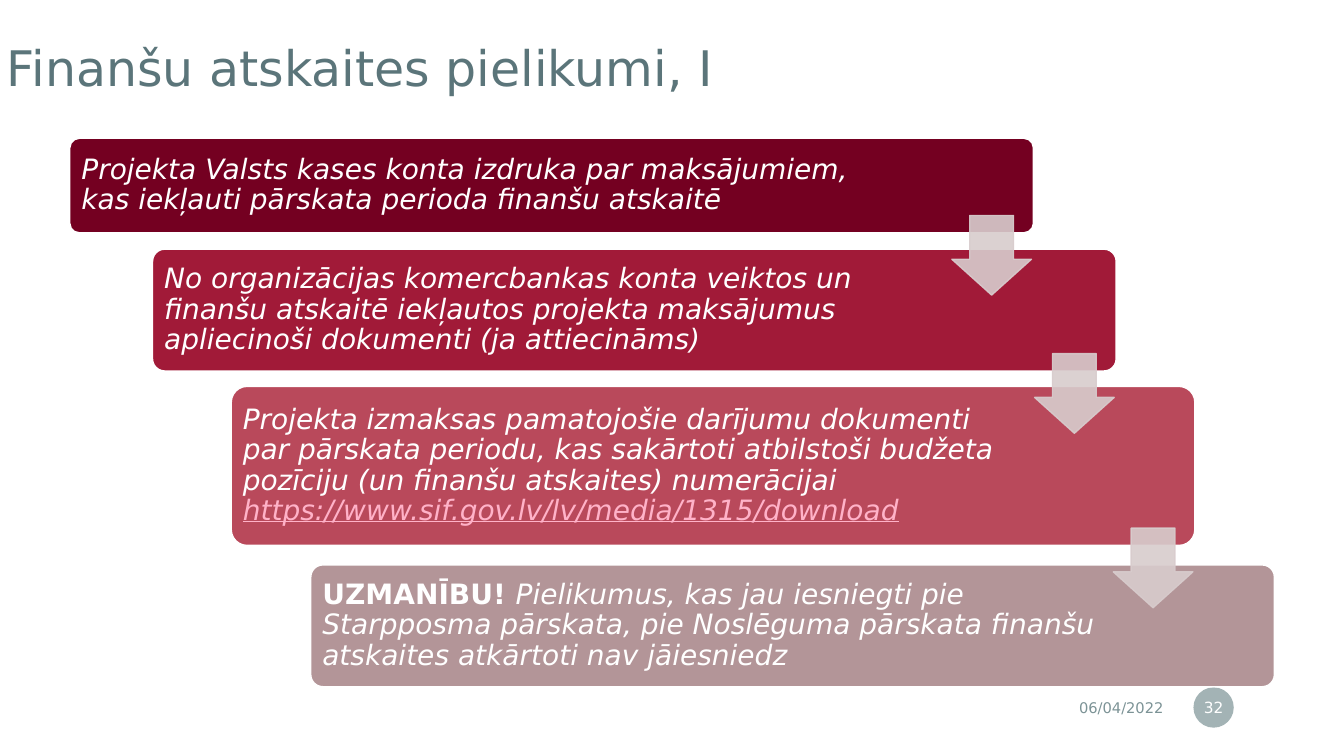
from pptx import Presentation
from pptx.dml.color import RGBColor
from pptx.enum.shapes import MSO_SHAPE
from pptx.enum.text import MSO_ANCHOR, MSO_AUTO_SIZE, PP_ALIGN
from pptx.oxml.ns import qn
from pptx.util import Pt
from lxml import etree

ROUNDED, ARROW, OVAL = MSO_SHAPE.ROUNDED_RECTANGLE, MSO_SHAPE.DOWN_ARROW, MSO_SHAPE.OVAL
TOP, MIDDLE = MSO_ANCHOR.TOP, MSO_ANCHOR.MIDDLE
LEFT, CENTER, RIGHT = PP_ALIGN.LEFT, PP_ALIGN.CENTER, PP_ALIGN.RIGHT
NO_FIT = MSO_AUTO_SIZE.NONE

FONT = "DejaVu Sans"
WHITE = RGBColor(0xFF, 0xFF, 0xFF)
SLATE = RGBColor(0x5B, 0x75, 0x7A)
GREY = RGBColor(0x7C, 0x93, 0x96)
WINE = RGBColor(0x74, 0x00, 0x21)
CRIMSON = RGBColor(0xA1, 0x1A, 0x38)
ROSE = RGBColor(0xB9, 0x49, 0x5B)
MAUVE = RGBColor(0xB3, 0x95, 0x98)
PINK = RGBColor(0xFF, 0xB2, 0xC8)
PALE = RGBColor(0xD8, 0xCC, 0xCD)


def write(sp, text, size=20, color=WHITE, bold=False, italic=False, underline=False,
          align=LEFT, anchor=MIDDLE, spacing=0.9, insets=(5.76, 5.76, 5.76, 5.76)):
    tf = sp.text_frame
    tf.word_wrap = True
    tf.auto_size = NO_FIT
    tf.vertical_anchor = anchor
    tf.margin_left, tf.margin_top, tf.margin_right, tf.margin_bottom = map(Pt, insets)
    p = tf.paragraphs[0]
    p.alignment = align
    p.line_spacing = spacing
    p.space_before = Pt(0)
    r = p.add_run()
    r.text = text
    font = r.font
    font.name, font.size, font.color.rgb = FONT, Pt(size), color
    font.bold, font.italic, font.underline = bold, italic, underline


def add_shape(kind, left, top, width, height, fill, line=None, opacity=100):
    sp = s.shapes.add_shape(kind, Pt(left), Pt(top), Pt(width), Pt(height))
    sp.shadow.inherit = False
    sp.fill.solid()
    sp.fill.fore_color.rgb = fill
    if line is None:
        sp.line.fill.background()
    else:
        sp.line.color.rgb = line
        sp.line.width = Pt(1)
    if opacity < 100:
        for solid in sp._element.spPr.iter(qn("a:solidFill")):
            etree.SubElement(solid[0], qn("a:alpha"), val=str(opacity * 1000))
    return sp


prs = Presentation()
prs.slide_width, prs.slide_height = Pt(960), Pt(540)
s = prs.slides.add_slide(prs.slide_layouts[5])

title = s.shapes.title
title.left, title.top, title.width, title.height = Pt(-9.4), Pt(25.2), Pt(821.5), Pt(85.7)
write(title, "Finanšu atskaites pielikumi, I", size=35, color=SLATE, anchor=TOP,
      insets=(14.4, 6, 14.4, 14.4))

date = s.shapes.add_textbox(Pt(621.4), Pt(492.5), Pt(216.7), Pt(25.2))
write(date, "06/04/2022", size=10.5, color=GREY, align=RIGHT, spacing=1,
      insets=(7.2, 3.6, 7.2, 3.6))

badge = add_shape(OVAL, 852.5, 491, 28.8, 28.8, GREY, opacity=70)
write(badge, "32", size=11, align=CENTER, spacing=1, insets=(1.44, 3.6, 1.44, 3.6))

CARD_WIDTH = 688.3
ARROW_SIZE = 56.9
cards = [
    (49.9, 98.8, 67.5, 587.5, WINE, [
        ("Projekta Valsts kases konta izdruka par maksājumiem, "
         "kas iekļauti pārskata perioda finanšu atskaitē", {"italic": True})]),
    (109, 178, 87, 568.8, CRIMSON, [
        ("No organizācijas komercbankas konta veiktos un finanšu atskaitē iekļautos "
         "projekta maksājumus apliecinoši dokumenti (ja attiecināms)", {"italic": True})]),
    (165.2, 276, 113.6, 568.8, ROSE, [
        ("Projekta izmaksas pamatojošie darījumu dokumenti par pārskata periodu, kas "
         "sakārtoti atbilstoši budžeta pozīciju (un finanšu atskaites) numerācijai ",
         {"italic": True}),
        ("https://www.sif.gov.lv/lv/media/1315/download",
         {"italic": True, "underline": True, "color": PINK})]),
    (222, 403.5, 87, 568.8, MAUVE, [
        ("UZMANĪBU! ", {"bold": True}),
        ("Pielikumus, kas jau iesniegti pie Starpposma pārskata, pie Noslēguma "
         "pārskata finanšu atskaites atkārtoti nav jāiesniedz", {"italic": True})]),
]

for left, top, height, text_width, fill, runs in cards:
    card = add_shape(ROUNDED, left, top, CARD_WIDTH, height, fill, WHITE)
    card.adjustments[0] = 0.1
    label = s.shapes.add_textbox(Pt(left + 2.5), Pt(top + 2.5), Pt(text_width), Pt(height - 5))
    for text, style in runs:
        write(label, text, **style)

for left, top, height, *_ in cards[:-1]:
    arrow = add_shape(ARROW, left + 630, top + height - 12.4, ARROW_SIZE, ARROW_SIZE,
                      PALE, PALE, opacity=90)
    arrow.adjustments[0] = 0.55
    arrow.adjustments[1] = 0.45

prs.save("out.pptx")
